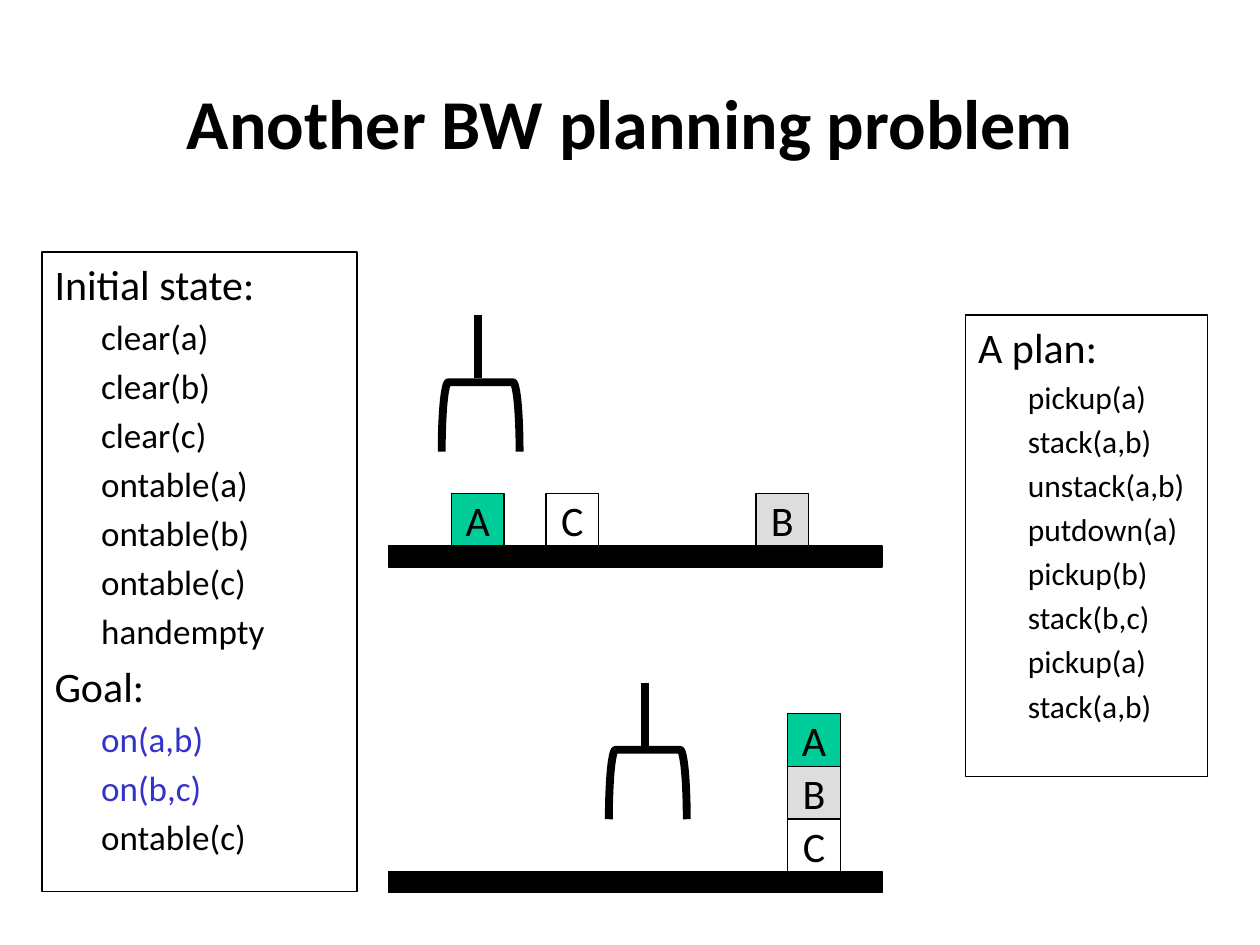
from dataclasses import dataclass
from typing import Optional

from lxml.etree import SubElement
from pptx import Presentation
from pptx.dml.color import RGBColor
from pptx.enum.shapes import MSO_CONNECTOR, MSO_SHAPE
from pptx.enum.text import MSO_ANCHOR, PP_ALIGN
from pptx.oxml.ns import qn
from pptx.util import Cm, Pt

BLACK = RGBColor(0x00, 0x00, 0x00)
GREEN = RGBColor(0x00, 0xCC, 0x99)
GRAY = RGBColor(0xDD, 0xDD, 0xDD)
BLUE = RGBColor(0x33, 0x33, 0xCC)

FONT = "Calibri"
SIDE = 1.06
FILLS = {"A": GREEN, "B": GRAY, "C": None}


@dataclass(frozen=True)
class Block:
    name: str
    left: float
    level: int = 0


@dataclass(frozen=True)
class Scene:
    floor: float
    hand_x: float
    hand_y: float
    blocks: tuple[Block, ...]


@dataclass(frozen=True)
class Line:
    text: str
    size: float = 24
    indent: float = 0
    color: RGBColor = BLACK


@dataclass(frozen=True)
class Panel:
    left: float
    top: float
    width: float
    height: float
    lines: tuple[Line, ...]


def steps(names: str, size: float, indent: float, color: RGBColor = BLACK) -> tuple[Line, ...]:
    return tuple(Line(name, size, indent, color) for name in names.split())


SCENES = (
    Scene(11.01, 9.63, 6.35, (Block("A", 9.1), Block("B", 15.24), Block("C", 11.01))),
    Scene(17.57, 13, 13.76, (Block("A", 15.88, 2), Block("B", 15.88, 1), Block("C", 15.88))),
)

PANELS = (
    Panel(0.85, 5.08, 6.35, 12.9, (
        Line("Initial state:"),
        *steps("clear(a) clear(b) clear(c) ontable(a) ontable(b) ontable(c) handempty", 20, 0.94),
        Line("Goal:"),
        *steps("on(a,b) on(b,c)", 20, 0.94, BLUE),
        Line("ontable(c)", 20, 0.94),
    )),
    Panel(19.47, 6.35, 4.87, 9.31, (
        Line("A plan:"),
        *steps("pickup(a) stack(a,b) unstack(a,b) putdown(a) "
               "pickup(b) stack(b,c) pickup(a) stack(a,b)", 18, 1),
    )),
)


def style(para, size: float, color: RGBColor = BLACK, bold: bool = False) -> None:
    for run in para.runs:
        run.font.name = FONT
        run.font.size = Pt(size)
        run.font.bold = bold
        run.font.color.rgb = color


def add_form(shapes, kind, left: float, top: float, width: float, height: float,
             fill: Optional[RGBColor] = None, weight: float = 0.75):
    form = shapes.add_shape(kind, Cm(left), Cm(top), Cm(width), Cm(height))
    form.shadow.inherit = False
    if fill is None:
        form.fill.background()
    else:
        form.fill.solid()
        form.fill.fore_color.rgb = fill
    form.line.color.rgb = BLACK
    form.line.width = Pt(weight)
    return form


def add_title(shapes, text: str) -> None:
    box = shapes.add_textbox(Cm(1.9), Cm(0.85), Cm(21.6), Cm(3.18))
    frame = box.text_frame
    frame.word_wrap = True
    frame.vertical_anchor = MSO_ANCHOR.MIDDLE
    frame.text = text
    para = frame.paragraphs[0]
    para.alignment = PP_ALIGN.CENTER
    style(para, 40, bold=True)


def add_panel(shapes, panel: Panel) -> None:
    box = add_form(shapes, MSO_SHAPE.RECTANGLE, panel.left, panel.top, panel.width, panel.height)
    frame = box.text_frame
    frame.word_wrap = True
    frame.vertical_anchor = MSO_ANCHOR.TOP
    frame.text = "\n".join(line.text for line in panel.lines)
    for para, line in zip(frame.paragraphs, panel.lines):
        para.alignment = PP_ALIGN.LEFT
        para.space_before = Pt(line.size * 0.2)
        para._p.get_or_add_pPr().set("marL", str(Cm(line.indent)))
        style(para, line.size, line.color)


def add_block(shapes, block: Block, floor: float) -> None:
    top = floor - SIDE * (block.level + 1)
    box = add_form(shapes, MSO_SHAPE.RECTANGLE, block.left, top, SIDE, SIDE, FILLS[block.name])
    frame = box.text_frame
    frame.word_wrap = False
    frame.vertical_anchor = MSO_ANCHOR.MIDDLE
    frame.text = block.name
    para = frame.paragraphs[0]
    para.alignment = PP_ALIGN.CENTER
    style(para, 24)


def add_hand(shapes, left: float, top: float) -> None:
    wrist = top + 1.27
    grip = add_form(shapes, MSO_SHAPE.RIGHT_BRACKET, left - 0.64, wrist, 1.4, 1.57, weight=4.5)
    grip.adjustments[0] = 0.095
    grip.rotation = 270
    arm = shapes.add_connector(MSO_CONNECTOR.STRAIGHT, Cm(left), Cm(top), Cm(left), Cm(wrist))
    arm.line.color.rgb = BLACK
    arm.line.width = Pt(4.5)
    SubElement(arm._element.spPr, qn("a:effectLst"))


def add_scene(shapes, scene: Scene) -> None:
    group = shapes.add_group_shape().shapes
    add_form(group, MSO_SHAPE.RECTANGLE, 7.83, scene.floor, 9.95, 0.42, BLACK)
    for block in scene.blocks:
        add_block(group, block, scene.floor)
    add_hand(group, scene.hand_x, scene.hand_y)


def main() -> None:
    deck = Presentation()
    deck.slide_width = Cm(25.4)
    deck.slide_height = Cm(19.05)
    shapes = deck.slides.add_slide(deck.slide_layouts[6]).shapes
    add_title(shapes, "Another BW planning problem")
    state, plan = PANELS
    add_panel(shapes, state)
    for scene in SCENES:
        add_scene(shapes, scene)
    add_panel(shapes, plan)
    deck.save("out.pptx")


if __name__ == "__main__":
    main()
